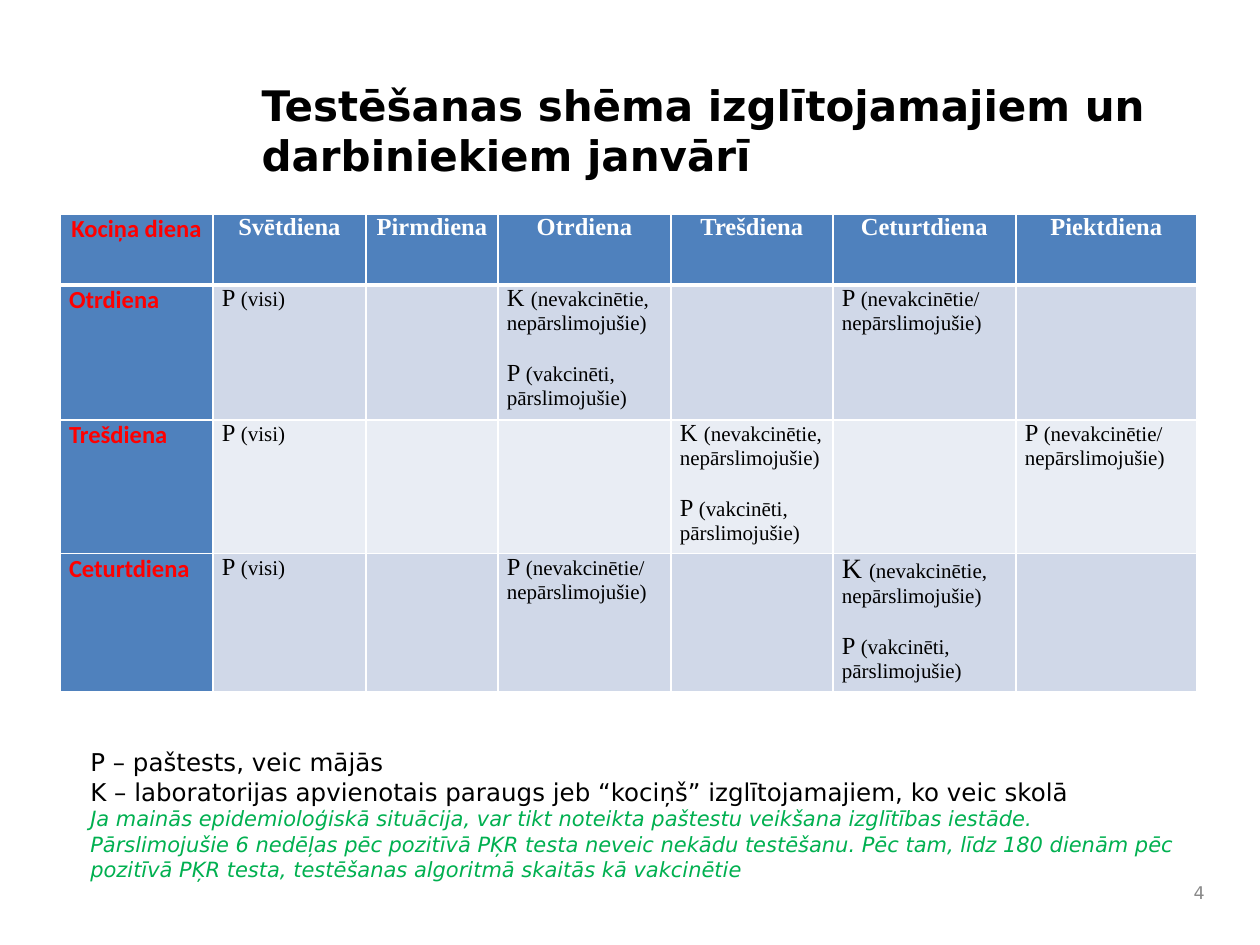
"""Builds the January testing scheme slide."""
from lxml import etree
from pptx import Presentation, util as u
from pptx.dml.color import RGBColor
from pptx.enum import text
from pptx.oxml import ns

COLOURS = {"black": "000000", "white": "FFFFFF", "red": "FF0000", "green": "00B050",
           "grey": "898989", "blue": "4F81BD", "dark band": "D0D8E8", "light band": "E9EDF4"}
SANS, SERIF, CALIBRI = "DejaVu Sans", "Times New Roman", "Calibri"
LEFT, CENTER, RIGHT = text.PP_ALIGN.LEFT, text.PP_ALIGN.CENTER, text.PP_ALIGN.RIGHT


def px(value):
    return u.Emu(round(value * 914400 / 126))


def write(paragraph, words, size=14, font=SANS, colour="black", bold=False, italic=False,
          align=LEFT):
    paragraph.alignment = align
    run = paragraph.add_run()
    run.text = words
    run.font.size = u.Pt(size)
    run.font.name = font
    run.font.bold = bold
    run.font.italic = italic
    run.font.color.rgb = RGBColor.from_string(COLOURS[colour])


class SlideBuilder:
    """Holds the slide and its table style."""

    def __init__(self, presentation):
        self.slide = presentation.slides.add_slide(presentation.slide_layouts[5])
        self.side_inset = px(9)

    def title(self, words, left, top, width, height):
        shape = self.slide.shapes.title
        shape.left, shape.top, shape.width, shape.height = map(px, (left, top, width, height))
        frame = shape.text_frame
        frame.auto_size = text.MSO_AUTO_SIZE.NONE
        frame.vertical_anchor = text.MSO_ANCHOR.TOP
        write(frame.paragraphs[0], words, size=24, bold=True)

    def text_box(self, lines, left, top, width, height, anchor=text.MSO_ANCHOR.TOP):
        shape = self.slide.shapes.add_textbox(*map(px, (left, top, width, height)))
        frame = shape.text_frame
        frame.word_wrap = True
        frame.vertical_anchor = anchor
        for index, (words, style) in enumerate(lines):
            paragraph = frame.add_paragraph() if index else frame.paragraphs[0]
            write(paragraph, words, **style)

    def table(self, left, top, widths, heights):
        table = self.slide.shapes.add_table(
            len(heights), len(widths), px(left), px(top),
            px(sum(widths)), px(sum(heights))).table
        for column, width in zip(table.columns, widths):
            column.width = px(width)
        for row, height in zip(table.rows, heights):
            row.height = px(height)
        return table

    def cell(self, cell, fill, bottom=1):
        cell.margin_left = cell.margin_right = self.side_inset
        cell.margin_top = cell.margin_bottom = 0
        properties = cell._tc.get_or_add_tcPr()
        for side, width in (("L", 1), ("R", 1), ("T", 1), ("B", bottom)):
            line = etree.SubElement(properties, ns.qn(f"a:ln{side}"), w=str(u.Pt(width)))
            solid = etree.SubElement(line, ns.qn("a:solidFill"))
            etree.SubElement(solid, ns.qn("a:srgbClr"), val=COLOURS["white"])
        cell.fill.solid()
        cell.fill.fore_color.rgb = RGBColor.from_string(COLOURS[fill])

    def tests(self, cell, tests):
        for index, (code, group, size) in enumerate(tests):
            paragraph = cell.text_frame.add_paragraph() if index else cell.text_frame.paragraphs[0]
            if index:
                paragraph.space_before = u.Pt(14)
            write(paragraph, code + " ", size=size, font=SERIF)
            write(paragraph, group, size=12, font=SERIF)


def main():
    presentation = Presentation()
    presentation.slide_width, presentation.slide_height = px(1260), px(945)
    builder = SlideBuilder(presentation)
    builder.text_box([("4", dict(size=10, colour="grey", align=RIGHT))],
                     1176, 872, 41, 41, anchor=text.MSO_ANCHOR.MIDDLE)

    days = ["Kociņa diena", "Svētdiena", "Pirmdiena", "Otrdiena", "Trešdiena",
            "Ceturtdiena", "Piektdiena"]
    everyone = [("P", "(visi)", 14)]
    unprotected = [("P", "(nevakcinētie/ nepārslimojušie)", 14)]
    pooled, pooled_large = (
        [("K", "(nevakcinētie, nepārslimojušie)", size), ("P", "(vakcinēti, pārslimojušie)", 14)]
        for size in (14, 16))
    schedule = [("Otrdiena", {1: everyone, 3: pooled, 5: unprotected}),
                ("Trešdiena", {1: everyone, 4: pooled, 6: unprotected}),
                ("Ceturtdiena", {1: everyone, 3: unprotected, 5: pooled_large})]
    table = builder.table(60, 214, [153, 153, 132, 173, 162, 183, 181], [71, 135, 128, 132])

    for column, day in enumerate(days):
        cell = table.cell(0, column)
        builder.cell(cell, "blue", bottom=3)
        font, colour = (SERIF, "white") if column else (CALIBRI, "red")
        write(cell.text_frame.paragraphs[0], day, font=font, colour=colour, bold=True,
              align=CENTER)
    for row, (pool_day, tests) in enumerate(schedule, 1):
        band = "dark band" if row % 2 else "light band"
        for column in range(len(days)):
            cell = table.cell(row, column)
            builder.cell(cell, band if column else "blue")
            builder.tests(cell, tests.get(column, []))
        write(table.cell(row, 0).text_frame.paragraphs[0], pool_day, font=CALIBRI,
              colour="red", bold=True)

    note = dict(size=12, colour="green", italic=True)
    builder.text_box([
        ("P – paštests, veic mājās", {}),
        ("K – laboratorijas apvienotais paraugs jeb “kociņš” izglītojamajiem, ko veic skolā", {}),
        ("Ja mainās epidemioloģiskā situācija, var tikt noteikta paštestu veikšana "
         "izglītības iestāde.", note),
        ("Pārslimojušie 6 nedēļas pēc pozitīvā PĶR testa neveic nekādu testēšanu. Pēc tam, "
         "līdz 180 dienām pēc pozitīvā PĶR testa, testēšanas algoritmā skaitās kā vakcinētie",
         note)], 78, 741, 1119, 149)
    builder.title("Testēšanas shēma izglītojamajiem un darbiniekiem janvārī", 249, 73, 948, 115)
    presentation.save("out.pptx")


if __name__ == "__main__":
    main()
